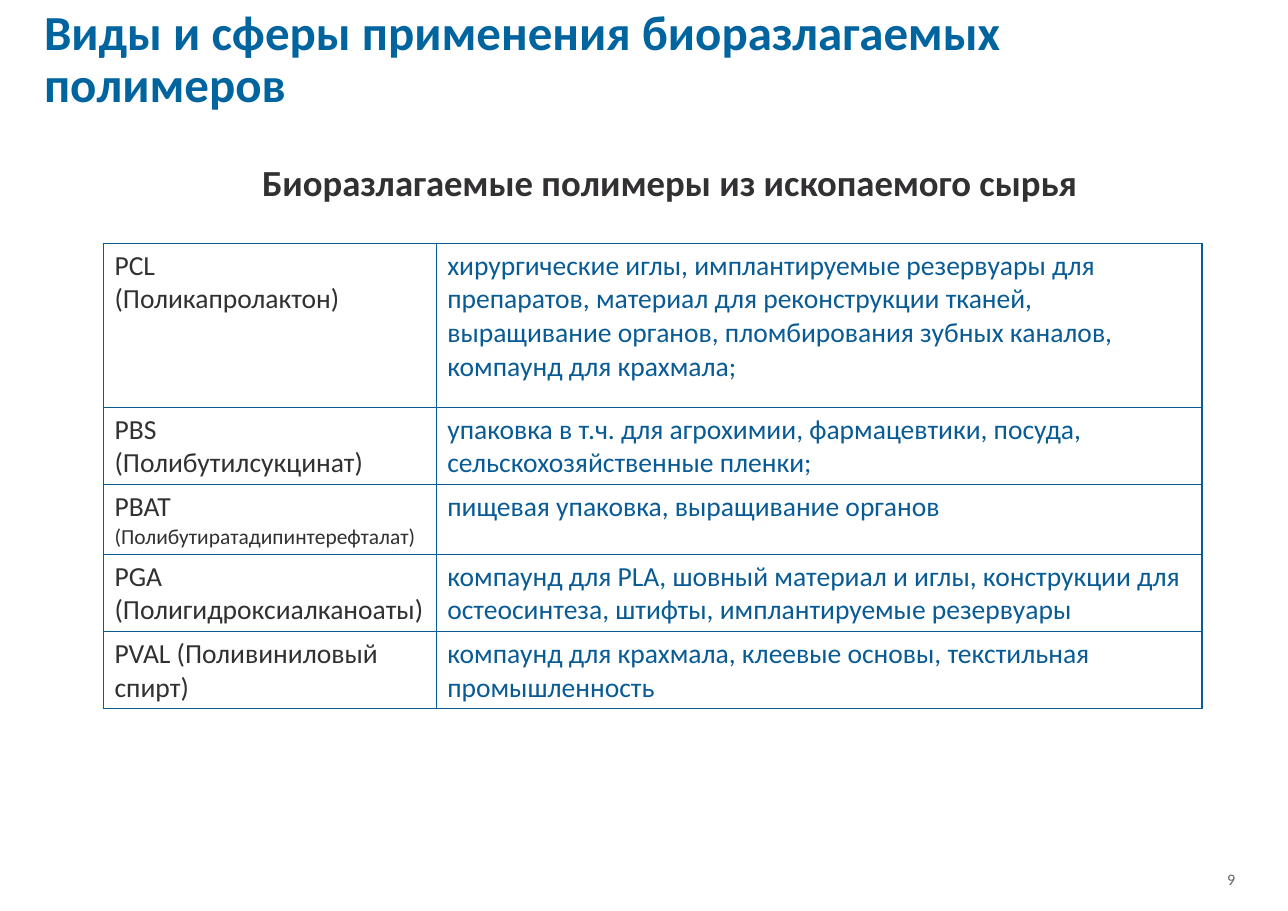
import pptx
import pptx.util
import pptx.dml.color
import pptx.enum.text
import pptx.oxml.ns
import lxml.etree

Inches = pptx.util.Inches
Pt = pptx.util.Pt
RGBColor = pptx.dml.color.RGBColor
Anchor = pptx.enum.text.MSO_ANCHOR
Align = pptx.enum.text.PP_ALIGN
qn = pptx.oxml.ns.qn

BLUE = RGBColor(0x00, 0x65, 0x9F)
NAVY = RGBColor(0x09, 0x5B, 0x95)
DARK = RGBColor(0x32, 0x30, 0x32)
GREY = RGBColor(0x63, 0x62, 0x66)
FONT = "Calibri"

TITLE = "Виды и сферы применения биоразлагаемых полимеров"
HEAD = "Биоразлагаемые полимеры из ископаемого сырья"
NUMBER = "9"
ROWS = [
    (1.49, [[("PCL", 18)], [("(Поликапролактон)", 18)]],
     "хирургические иглы, имплантируемые резервуары для препаратов, "
     "материал для реконструкции тканей, выращивание органов, "
     "пломбирования зубных каналов, компаунд для крахмала;"),
    (0.7, [[("PBS", 18)], [("(Полибутилсукцинат)", 18)]],
     "упаковка в т.ч. для агрохимии, фармацевтики, посуда, "
     "сельскохозяйственные пленки;"),
    (0.63, [[("PBAT ", 18), ("(Полибутиратадипинтерефталат)", 14)]],
     "пищевая упаковка, выращивание органов"),
    (0.7, [[("PGA", 18)], [("(Полигидроксиалканоаты)", 18)]],
     "компаунд для PLA, шовный материал и иглы, конструкции для "
     "остеосинтеза, штифты, имплантируемые резервуары"),
    (0.7, [[("PVAL (Поливиниловый спирт)", 18)]],
     "компаунд для крахмала, клеевые основы, текстильная промышленность"),
]
WIDTHS = [3.02, 6.95]


def write(frame, paras, color, bold=False, align=Align.LEFT):
    frame.word_wrap = True
    for i, runs in enumerate(paras):
        para = frame.add_paragraph() if i else frame.paragraphs[0]
        para.alignment = align
        for text, size in runs:
            run = para.add_run()
            run.text = text
            font = run.font
            font.name = FONT
            font.size = Pt(size)
            font.bold = bold
            font.color.rgb = color


def border(cell):
    props = cell._tc.get_or_add_tcPr()
    for side in ("a:lnL", "a:lnR", "a:lnT", "a:lnB"):
        line = lxml.etree.SubElement(props, qn(side), w=str(Pt(1)))
        fill = lxml.etree.SubElement(line, qn("a:solidFill"))
        lxml.etree.SubElement(fill, qn("a:srgbClr"), val=str(NAVY))


def add_text(slide, box, text, size, color, **style):
    shape = slide.shapes.add_textbox(*map(Inches, box))
    write(shape.text_frame, [[(text, size)]], color, **style)
    return shape.text_frame


def add_grid(slide):
    high = sum(row[0] for row in ROWS)
    frame = slide.shapes.add_table(
        len(ROWS), len(WIDTHS), Inches(0.94), Inches(2.21),
        Inches(sum(WIDTHS)), Inches(high))
    table = frame.table
    table.first_row = False
    table.horz_banding = False
    for col, width in zip(table.columns, WIDTHS):
        col.width = Inches(width)
    for row, (height, name, use) in zip(table.rows, ROWS):
        row.height = Inches(height)
        cells = [(name, DARK), ([[(use, 18)]], NAVY)]
        for cell, (paras, color) in zip(row.cells, cells):
            write(cell.text_frame, paras, color)
            border(cell)
            cell.fill.background()


def main():
    deck = pptx.Presentation()
    deck.slide_width = Inches(11.69)
    deck.slide_height = Inches(8.27)
    slide = deck.slides.add_slide(deck.slide_layouts[5])

    title = slide.shapes.title
    title.left, title.top = Inches(0.3), Inches(0)
    title.width, title.height = Inches(8.96), Inches(1.1)
    frame = title.text_frame
    write(frame, [[(TITLE, 32)]], BLUE, bold=True)
    frame.auto_size = pptx.enum.text.MSO_AUTO_SIZE.NONE
    frame.vertical_anchor = Anchor.MIDDLE
    frame.paragraphs[0].line_spacing = 0.9

    add_text(slide, (2.28, 1.4, 8.01, 0.5), HEAD, 24, DARK, bold=True)
    add_grid(slide)
    foot = add_text(slide, (8.68, 7.76, 2.63, 0.44), NUMBER, 10.5, GREY,
                    align=Align.RIGHT)
    foot.vertical_anchor = Anchor.MIDDLE
    deck.save("out.pptx")


if __name__ == "__main__":
    main()
